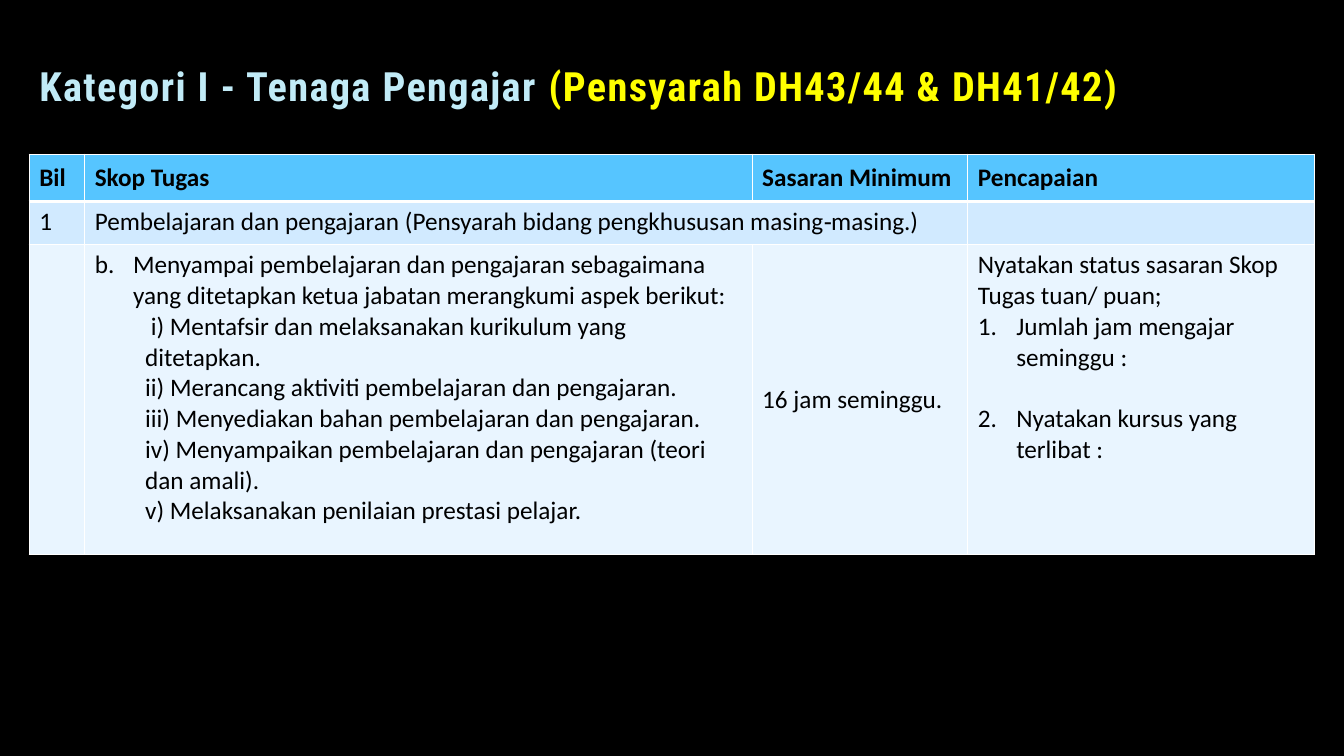
from lxml.etree import SubElement
from pptx import Presentation
from pptx.dml.color import RGBColor
from pptx.enum.text import MSO_ANCHOR, PP_ALIGN
from pptx.oxml import parse_xml
from pptx.oxml.ns import nsdecls, qn
from pptx.util import Inches, Pt


def color(code):
    return RGBColor.from_string(code)


def line(tag, width, code, alpha=100):
    return parse_xml(
        f'<a:{tag} {nsdecls("a")} w="{Pt(width)}"><a:solidFill>'
        f'<a:srgbClr val="{code}"><a:alpha val="{alpha * 1000}"/></a:srgbClr>'
        f'</a:solidFill><a:prstDash val="solid"/></a:{tag}>')


class Deck:
    head, body, size = "Roboto Condensed", "Calibri", 18
    ink, rule = "000000", "FFFFFF"

    def __init__(self, wide, high):
        self.prs = Presentation()
        self.prs.slide_width, self.prs.slide_height = Inches(wide), Inches(high)
        self.slide = self.prs.slides.add_slide(self.prs.slide_layouts[5])

    def back(self, code):
        fill = self.slide.background.fill
        fill.solid()
        fill.fore_color.rgb = color(code)

    def style(self, font, name, size, code, bold):
        font.name, font.size, font.bold = name, Pt(size), bold
        font.color.rgb = color(code)

    def title(self, box, parts):
        shape = self.slide.shapes.title
        shape.left, shape.top, shape.width, shape.height = map(Inches, box)
        frame = shape.text_frame
        frame.word_wrap = True
        frame.vertical_anchor = MSO_ANCHOR.BOTTOM
        para = frame.paragraphs[0]
        para.alignment, para.line_spacing = PP_ALIGN.LEFT, 0.9
        for text, code in parts:
            run = para.add_run()
            run.text = text
            self.style(run.font, self.head, 28.8, code, True)
            props = run.font._element
            props.set("spc", "100")
            props.insert(0, line("ln", 0.75, "404040", 10))

    def table(self, spot, cols, rows):
        frame = self.slide.shapes.add_table(
            len(rows), len(cols), *map(Inches, (*spot, sum(cols), sum(rows))))
        grid = frame.table
        for col, wide in zip(grid.columns, cols):
            col.width = Inches(wide)
        for row, high in zip(grid.rows, rows):
            row.height = Inches(high)
        return grid

    def paint(self, cell, code, top=1, base=1):
        cell.fill.solid()
        cell.fill.fore_color.rgb = color(code)
        props = cell._tc.get_or_add_tcPr()
        sides = {"lnL": 1, "lnR": 1, "lnT": top, "lnB": base}
        for spot, (tag, width) in enumerate(sides.items()):
            props.insert(spot, line(tag, width, self.rule))

    def label(self, cell, items, bold=False, middle=False):
        """Each item is a text, or a tuple: text, left, hang, numbering, start, gap."""
        cell.vertical_anchor = MSO_ANCHOR.MIDDLE if middle else MSO_ANCHOR.TOP
        frame = cell.text_frame
        for spot, item in enumerate(items):
            text, left, hang, kind, start, gap = (
                (item, 0, 0, None, 1, 0) if isinstance(item, str) else item)
            para = frame.add_paragraph() if spot else frame.paragraphs[0]
            para.text = text
            if gap:
                para.space_before = Pt(gap)
            props = para._p.get_or_add_pPr()
            props.set("marL", str(Inches(left)))
            props.set("indent", str(Inches(-hang)))
            if kind:
                mark = SubElement(props, qn("a:buAutoNum"), type=kind)
                if start > 1:
                    mark.set("startAt", str(start))
            for run in para.runs:
                self.style(run.font, self.body, self.size, self.ink, bold)


def item(text, kind, start=1, gap=0):
    return text, 0.38, 0.38, kind, start, gap


def sub(text):
    return text, 0.5, 0, None, 1, 0


def main():
    deck = Deck(13.33, 7.5)
    deck.back("000000")

    # Title
    deck.title((0.29, 0.47, 11.37, 0.67), [
        ("Kategori I - Tenaga Pengajar ", "C1EBF7"),
        ("(Pensyarah DH43/44 & DH41/42)", "FFFF00")])

    # Table frame
    grid = deck.table((0.29, 1.53), (0.55, 6.62, 2.14, 3.44), (0.47, 0.43, 3.07))
    looks = [("56C5FF", 1, 3), ("D1EAFF", 3, 1), ("E9F5FF", 1, 1)]
    for row, look in zip(grid.rows, looks):
        for cell in row.cells:
            deck.paint(cell, *look)
    grid.cell(1, 1).merge(grid.cell(1, 2))

    # Header row
    heads = ["Bil", "Skop Tugas", "Sasaran Minimum", "Pencapaian"]
    for col, text in enumerate(heads):
        deck.label(grid.cell(0, col), [text], bold=True, middle=True)

    # Task row
    deck.label(grid.cell(1, 0), ["1"])
    deck.label(grid.cell(1, 1), [
        "Pembelajaran dan pengajaran (Pensyarah bidang pengkhususan masing‐masing.)"])

    # Detail row
    tasks = [
        " i) Mentafsir dan melaksanakan kurikulum yang ditetapkan.",
        "ii) Merancang aktiviti pembelajaran dan pengajaran.",
        "iii) Menyediakan bahan pembelajaran dan pengajaran.",
        "iv) Menyampaikan pembelajaran dan pengajaran (teori dan amali).",
        "v) Melaksanakan penilaian prestasi pelajar."]
    deck.label(grid.cell(2, 1), [
        item("Menyampai pembelajaran dan pengajaran sebagaimana yang ditetapkan "
             "ketua jabatan merangkumi aspek berikut:", "alphaLcPeriod", start=2),
        *map(sub, tasks)])
    deck.label(grid.cell(2, 2), ["16 jam seminggu."], middle=True)
    deck.label(grid.cell(2, 3), [
        "Nyatakan status sasaran Skop Tugas tuan/ puan;",
        item("Jumlah jam mengajar seminggu :", "arabicPeriod"),
        item("Nyatakan kursus yang terlibat :", "arabicPeriod", gap=22)])

    deck.prs.save("out.pptx")


if __name__ == "__main__":
    main()
